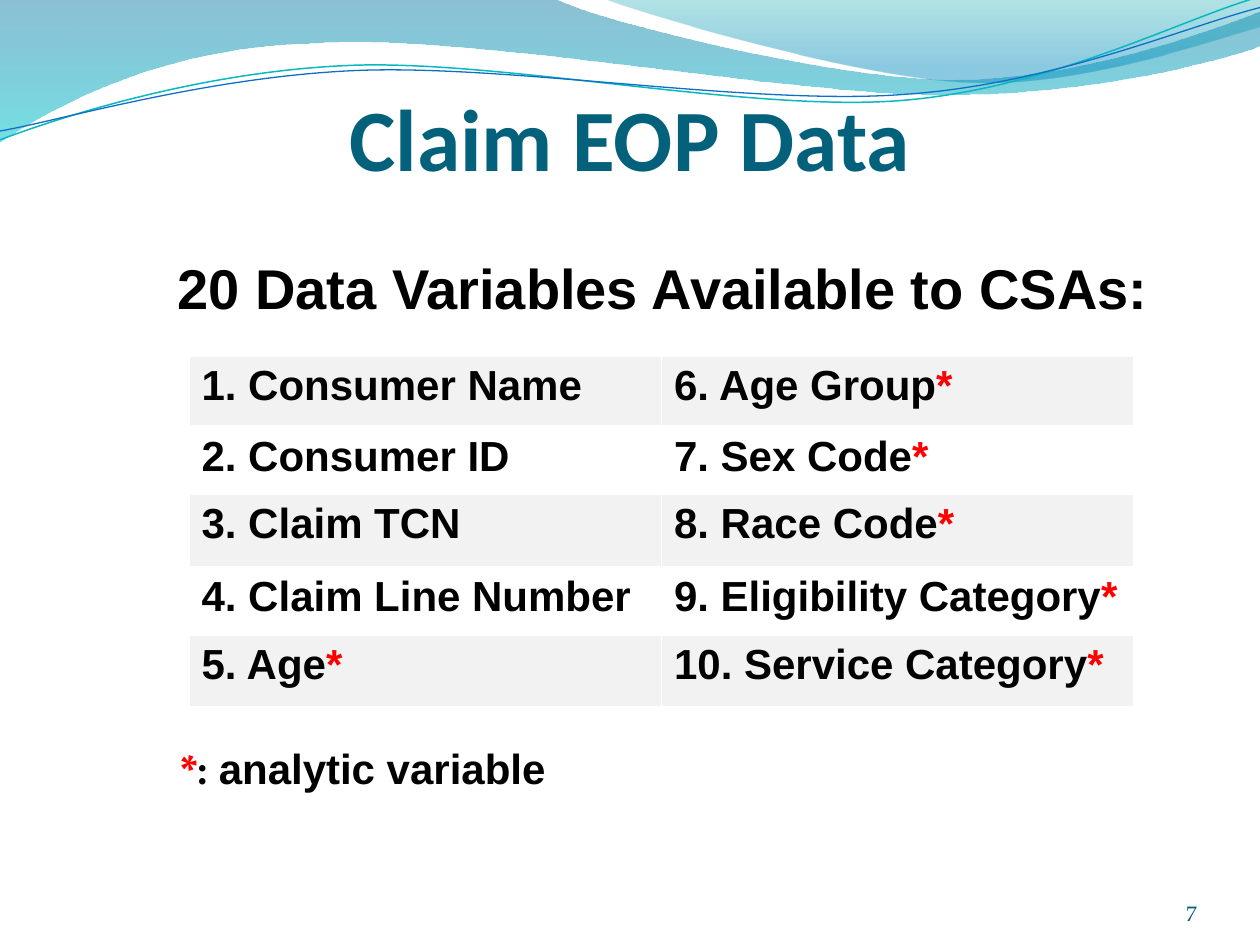
from dataclasses import dataclass
from typing import NamedTuple

from lxml import etree
from pptx import Presentation
from pptx.dml.color import RGBColor
from pptx.enum.text import MSO_ANCHOR, PP_ALIGN
from pptx.oxml.ns import qn
from pptx.util import Inches, Pt

TOP, BOTTOM = MSO_ANCHOR.TOP, MSO_ANCHOR.BOTTOM
LEFT, CENTER, RIGHT = PP_ALIGN.LEFT, PP_ALIGN.CENTER, PP_ALIGN.RIGHT
WIDTH, HEIGHT = 10, 7.5
SERIF = "TeX Gyre Pagella"
COLORS = {
    "title": "04617B", "text": "000000", "star": "FF0000", "number": "045D75",
    "band": "F2F2F2", "border": "FFFFFF", "teal": "0AB8BF", "blue": "0F6FC6",
    "wave_top": "0074A1", "wave_end": "00C6CF",
    "crest_top": "00A1A9", "crest_end": "008BBF",
}


class Span(NamedTuple):
    text: str
    size: float
    font: str = "Arial"
    color: str = "text"
    bold: bool = True


class Stop(NamedTuple):
    position: float
    color: str
    opacity: int


@dataclass
class Wave:
    """Each segment has two numbers for a line or six for a cubic curve."""
    start: tuple
    segments: list
    stops: tuple = ()
    line: str = ""
    weight: float = 0


@dataclass
class Label:
    """Place is left, top, width and height as shares of the slide."""
    place: tuple
    spans: list
    align: PP_ALIGN = LEFT
    anchor: MSO_ANCHOR = TOP
    insets: tuple = (0.1, 0.05, 0.1, 0.05)
    wrap: bool = True


WAVES = [
    Wave((0, 0), [
        (4.4, -0.01), (4.76, 0.17, 6.64, 0.63, 7.58, 0.63),
        (8.53, 0.63, 9.58, 0.26, 10, 0.09), (10.01, 0.36),
        (9.83, 0.44, 8.7, 0.76, 7.46, 0.75), (6.22, 0.75, 3.82, 0.28, 2.57, 0.34),
        (1.29, 0.36, 0.46, 0.83, -0.01, 1.13)],
        stops=(Stop(0, "wave_top", 45), Stop(1, "wave_end", 55))),
    Wave((4.79, -0.01), [
        (5.09, 0.11, 6.82, 0.62, 7.69, 0.65),
        (8.56, 0.69, 9.61, 0.32, 10, 0.21), (10, 0)],
        stops=(Stop(0, "crest_top", 30), Stop(0.8, "crest_end", 45))),
    Wave((0, 1.11), [
        (0.48, 0.93, 1.58, 0.57, 2.77, 0.52), (3.95, 0.47, 5.93, 0.89, 7.13, 0.8),
        (8.33, 0.71, 9.38, 0.15, 9.98, -0.02)], line="teal", weight=0.85),
    Wave((0, 1.04), [
        (0.47, 0.96, 1.64, 0.61, 2.83, 0.56), (4.03, 0.51, 5.97, 0.84, 7.17, 0.75),
        (8.36, 0.67, 9.41, 0.21, 10, 0.06)], line="blue", weight=0.75),
]

LABELS = [
    Label((0.05, 0.07, 0.9, 0.13), [Span("Claim EOP Data", 50, "Calibri", "title")],
          CENTER, BOTTOM, (0, 0.05, 0, 0)),
    Label((0.06, 0.26, 0.9, 0.59), [Span("20 Data Variables Available to CSAs:", 32)],
          insets=(0.81, 0.06, 0.1, 0.05)),
    Label((0.87, 0.93, 0.08, 0.05), [Span("7", 12, SERIF, "number", False)],
          RIGHT, BOTTOM, (0, 0, 0, 0)),
    Label((0.13, 0.78, 0.32, 0.07), [
        Span("*", 24, SERIF, "star"), Span(": ", 24, SERIF),
        Span("analytic variable", 24)], insets=(0.13, 0.04, 0.1, 0.05), wrap=False),
]

# A trailing star marks an analytic variable
VARIABLES = [
    "Consumer Name", "Consumer ID", "Claim TCN", "Claim Line Number", "Age*",
    "Age Group*", "Sex Code*", "Race Code*", "Eligibility Category*",
    "Service Category*",
]
ROW_HEIGHTS = [0.56, 0.53, 0.58, 0.54, 0.57]


def rgb(name: str) -> RGBColor:
    return RGBColor.from_string(COLORS[name])


def bend_segments(shape, segments: list) -> None:
    """Turn the straight segments that have control points into cubic curves."""
    straight = list(shape._element.spPr.iter(qn("a:lnTo")))
    for element, segment in zip(straight, segments):
        if len(segment) == 2:
            continue
        curve = etree.Element(qn("a:cubicBezTo"))
        for x, y in zip(segment[::2], segment[1::2]):
            etree.SubElement(curve, qn("a:pt"), x=str(Inches(x) - shape.left),
                             y=str(Inches(y) - shape.top))
        element.getparent().replace(element, curve)


def draw_wave(page, wave: Wave) -> None:
    builder = page.shapes.build_freeform(*map(Inches, wave.start))
    ends = [tuple(map(Inches, segment[-2:])) for segment in wave.segments]
    builder.add_line_segments(ends, close=bool(wave.stops))
    shape = builder.convert_to_shape()
    bend_segments(shape, wave.segments)
    shape.shadow.inherit = False
    if wave.line:
        shape.fill.background()
        shape.line.color.rgb = rgb(wave.line)
        shape.line.width = Pt(wave.weight)
        return
    shape.line.fill.background()
    shape.fill.gradient()
    shape.fill.gradient_angle = 270
    for target, stop in zip(shape.fill.gradient_stops, wave.stops):
        target.position = stop.position
        target.color.rgb = rgb(stop.color)
    for color, stop in zip(shape._element.spPr.iter(qn("a:srgbClr")), wave.stops):
        etree.SubElement(color, qn("a:alpha"), val=str(stop.opacity * 1000))


def add_spans(para, spans: list) -> None:
    for span in spans:
        run = para.add_run()
        run.text = span.text
        run.font.size, run.font.name = Pt(span.size), span.font
        run.font.bold, run.font.color.rgb = span.bold, rgb(span.color)


def draw_label(page, label: Label) -> None:
    left, top, width, height = label.place
    box = page.shapes.add_textbox(Inches(left * WIDTH), Inches(top * HEIGHT),
                                  Inches(width * WIDTH), Inches(height * HEIGHT))
    frame = box.text_frame
    frame.word_wrap, frame.vertical_anchor = label.wrap, label.anchor
    (frame.margin_left, frame.margin_top,
     frame.margin_right, frame.margin_bottom) = map(Inches, label.insets)
    para = frame.paragraphs[0]
    para.alignment = label.align
    add_spans(para, label.spans)


def set_borders(cell, heavy_bottom: bool) -> None:
    properties = cell._tc.get_or_add_tcPr()
    for index, side in enumerate(("lnL", "lnR", "lnT", "lnB")):
        points = 3 if heavy_bottom and side == "lnB" else 1
        line = etree.Element(qn(f"a:{side}"), w=str(Pt(points)))
        fill = etree.SubElement(line, qn("a:solidFill"))
        etree.SubElement(fill, qn("a:srgbClr"), val=COLORS["border"])
        properties.insert(index, line)


def draw_table(page) -> None:
    rows = len(ROW_HEIGHTS)
    columns = len(VARIABLES) // rows
    table = page.shapes.add_table(
        rows, columns, Inches(0.15 * WIDTH), Inches(2.83),
        Inches(0.75 * WIDTH), Inches(sum(ROW_HEIGHTS))).table
    for row, height in zip(table.rows, ROW_HEIGHTS):
        row.height = Inches(height)
    for index, variable in enumerate(VARIABLES):
        column, row = divmod(index, rows)
        cell = table.cell(row, column)
        if row % 2 == 0:
            cell.fill.solid()
            cell.fill.fore_color.rgb = rgb("band")
        else:
            cell.fill.background()
        set_borders(cell, heavy_bottom=row == 0)
        spans = [Span(f"{index + 1}. {variable.rstrip('*')}", 24)]
        if variable.endswith("*"):
            spans.append(Span("*", 24, color="star"))
        add_spans(cell.text_frame.paragraphs[0], spans)


def main() -> None:
    deck = Presentation()
    deck.slide_width, deck.slide_height = Inches(WIDTH), Inches(HEIGHT)
    page = deck.slides.add_slide(deck.slide_layouts[6])
    for wave in WAVES:
        draw_wave(page, wave)
    for label in LABELS:
        draw_label(page, label)
    draw_table(page)
    deck.save("out.pptx")


if __name__ == "__main__":
    main()
